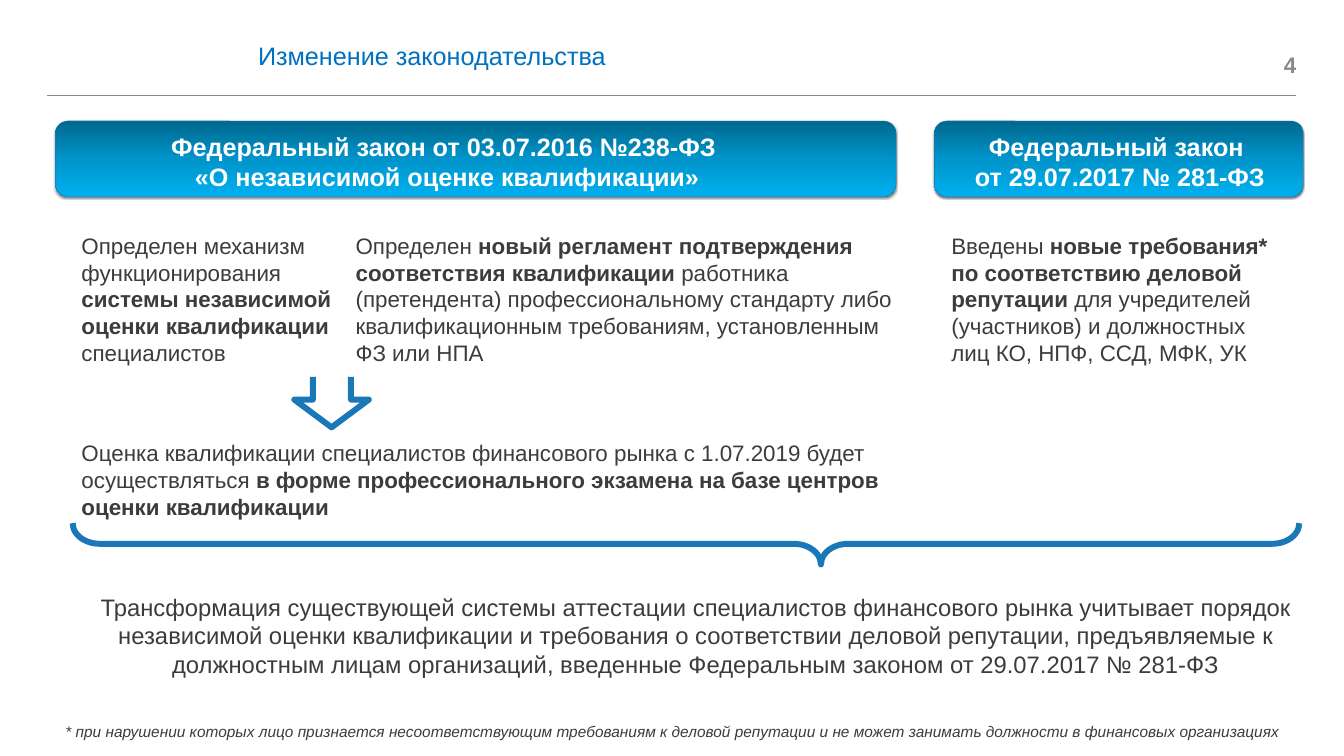
import copy
import dataclasses

import pptx
import pptx.dml.color
import pptx.enum.shapes
import pptx.enum.text
import pptx.oxml
import pptx.oxml.ns
import pptx.util

ALIGN = pptx.enum.text.PP_ALIGN
SHAPE = pptx.enum.shapes.MSO_SHAPE
CELL = pptx.util.Inches(1) / 12


@dataclasses.dataclass(frozen=True)
class Theme:
    """Colours, type sizes and line widths of the slide."""
    font: str = "Arial"
    white: str = "FFFFFF"
    ink: str = "3C3C3C"
    grey: str = "888A8D"
    title: str = "0070C0"
    accent: str = "1A78B9"
    gradient: tuple = ("00688E", "0094CA", "00B0F0")
    heading_size: int = 18
    summary_size: int = 17
    body_size: int = 16
    note_size: int = 11
    thick: float = 4.25
    thin: float = 0.5
    hairline: float = 0.25


@dataclasses.dataclass(frozen=True)
class Box:
    """A rectangle in cells of a grid of 160 columns by 90 rows."""
    left: float
    top: float
    width: float
    height: float

    def inner(self, left, top, width, height):
        """Return a box placed relative to this one."""
        return Box(self.left + left, self.top + top, width, height)

    def place(self):
        """Return left, top, width and height as slide lengths."""
        cells = (self.left, self.top, self.width, self.height)
        return [pptx.util.Emu(round(cell * CELL)) for cell in cells]


THEME = Theme()


def rgb(colour):
    """Return a colour object for a hex string."""
    return pptx.dml.color.RGBColor.from_string(colour)


def set_line(shape, colour, width):
    """Set the colour and width of an outline."""
    shape.line.color.rgb = rgb(colour)
    shape.line.width = pptx.util.Pt(width)


def add_text(page, box, text, size, colour=THEME.ink, bold=False, italic=False,
             align=ALIGN.LEFT, margins=None, fill=None):
    """Add a text box where bars in the text switch bold on and off."""
    shape = page.shapes.add_textbox(*box.place())
    frame = shape.text_frame
    frame.word_wrap = True
    if fill:
        shape.fill.solid()
        shape.fill.fore_color.rgb = rgb(fill)
    if margins is None:
        frame.auto_size = pptx.enum.text.MSO_AUTO_SIZE.SHAPE_TO_FIT_TEXT
    else:
        frame.margin_left = frame.margin_right = pptx.util.Inches(margins)
        frame.margin_top = frame.margin_bottom = pptx.util.Inches(margins)
    for number, line in enumerate(text.split("\n")):
        para = frame.add_paragraph() if number else frame.paragraphs[0]
        para.alignment = align
        for index, piece in enumerate(line.split("|")):
            span = para.add_run()
            span.text = piece
            span.font.name = THEME.font
            span.font.size = pptx.util.Pt(size)
            span.font.bold = bold or index % 2 == 1
            span.font.italic = italic
            span.font.color.rgb = rgb(colour)
    return frame


def add_header(page, box):
    """Add the title, the page number and the rule below them."""
    title = add_text(page, box.inner(24.84, 4.2, 112.8, 6.6), "Изменение законодательства",
                     THEME.heading_size, THEME.title, margins=0.02)
    title.paragraphs[0].line_spacing = 1.1
    number = add_text(page, box.inner(138.96, 5.64, 9.72, 4.2), "4", THEME.body_size,
                      THEME.grey, bold=True, align=ALIGN.RIGHT, margins=0)
    number.vertical_anchor = pptx.enum.text.MSO_ANCHOR.MIDDLE
    left, top, width, _ = box.inner(0, box.height, box.width, 0).place()
    rule = page.shapes.add_connector(pptx.enum.shapes.MSO_CONNECTOR.STRAIGHT,
                                     left, top, left + width, top)
    set_line(rule, THEME.grey, THEME.thin)
    properties = rule._element.spPr
    properties.append(properties.makeelement(pptx.oxml.ns.qn("a:effectLst"), {}))


def add_banner(page, box, caption_box, caption):
    """Add a rounded gradient banner with the name of a law."""
    banner = page.shapes.add_shape(SHAPE.ROUNDED_RECTANGLE, *box.place())
    set_line(banner, THEME.accent, THEME.hairline)
    banner.fill.gradient()
    banner.fill.gradient_angle = 270
    properties = banner._element.spPr
    stop_list = properties.find(".//" + pptx.oxml.ns.qn("a:gsLst"))
    stop_list.insert(1, copy.deepcopy(stop_list[0]))
    for index, stop in enumerate(banner.fill.gradient_stops):
        stop.color.rgb = rgb(THEME.gradient[index])
        stop.position = index / 2
    banner.shadow.inherit = False
    properties.find(pptx.oxml.ns.qn("a:effectLst")).append(pptx.oxml.parse_xml(
        '<a:outerShdw xmlns:a="http://schemas.openxmlformats.org/drawingml/2006/main" '
        'blurRad="12700" dist="12700" dir="5400000" rotWithShape="0">'
        '<a:srgbClr val="000000"><a:alpha val="50000"/></a:srgbClr></a:outerShdw>'))
    add_text(page, box.inner(*caption_box), caption, THEME.heading_size, THEME.white,
             bold=True, align=ALIGN.CENTER)


def add_assessment_law(page, box):
    """Add the law on assessment, its two provisions and their outcome."""
    add_banner(page, box.inner(0, 0, box.width, 9), (-0.48, 0.6, 94.2, 8.52),
               "Федеральный закон от 03.07.2016 №238-ФЗ \n«О независимой оценке квалификации»")
    add_text(page, box.inner(34.56, 12.6, 67.56, 17.4),
             "Определен |новый регламент подтверждения соответствия квалификации| работника "
             "(претендента) профессиональному стандарту либо квалификационным требованиям, "
             "установленным ФЗ или НПА", THEME.body_size, fill=THEME.white)
    add_text(page, box.inner(1.92, 12.6, 32.64, 17.4),
             "Определен механизм функционирования |системы независимой оценки квалификации"
             "| специалистов", THEME.body_size, fill=THEME.white)
    add_down_arrow(page, box.inner(28.44, 30.48, 8.88, 6))
    add_text(page, box.inner(1.92, 37.32, 98.04, 10.92),
             "Оценка квалификации специалистов финансового рынка с 1.07.2019 будет "
             "осуществляться |в форме профессионального экзамена на базе центров оценки "
             "квалификации", THEME.body_size)


def add_down_arrow(page, box):
    """Add an outlined arrow, open at the top, that fills the box."""
    left, top, width, height = box.place()
    outline = [(0.76, 0), (0.76, 0.45), (1, 0.45), (0.5, 1), (0, 0.45), (0.25, 0.45), (0.25, 0)]
    points = [(round(left + x * width), round(top + y * height)) for x, y in outline]
    builder = page.shapes.build_freeform(*points[0])
    builder.add_line_segments(points[1:], close=False)
    arrow = builder.convert_to_shape()
    arrow.shadow.inherit = False
    arrow.fill.background()
    set_line(arrow, THEME.accent, THEME.thick)


def add_reputation_law(page, box):
    """Add the law on business reputation and its provision."""
    add_banner(page, box.inner(0, 0, box.width, 9), (0.84, 0.6, 42.48, 8.52),
               "Федеральный закон \nот 29.07.2017 № 281-ФЗ")
    add_text(page, box.inner(0.84, 12.6, 42.48, 17.4),
             "Введены| новые требования* по соответствию деловой репутации |для учредителей "
             "(участников) и должностных лиц КО, НПФ, ССД, МФК, УК", THEME.body_size)


def add_summary(page, box):
    """Add the brace that joins both laws and the conclusion below it."""
    length, depth = box.width, 4.92
    upright = box.inner((length - depth) / 2, (depth - length) / 2, depth, length)
    brace = page.shapes.add_shape(SHAPE.RIGHT_BRACE, *upright.place())
    brace.rotation = 90
    brace.adjustments[0] = 0.66
    brace.adjustments[1] = 0.39
    brace.shadow.inherit = False
    brace.fill.background()
    set_line(brace, THEME.accent, THEME.thick)
    add_text(page, box.inner(1.92, 7.68, 144.6, 11.52),
             "Трансформация существующей системы аттестации специалистов финансового рынка "
             "учитывает порядок независимой оценки квалификации и требования о соответствии "
             "деловой репутации, предъявляемые к должностным лицам организаций, введенные "
             "Федеральным законом от 29.07.2017 № 281-ФЗ", THEME.summary_size,
             align=ALIGN.CENTER)


def add_footnote(page, box):
    """Add the note on the reputation requirements."""
    add_text(page, box, "* при нарушении которых лицо признается несоответствующим требованиям "
             "к деловой репутации и не может занимать должности в финансовых организациях",
             THEME.note_size, italic=True)


def main():
    """Build the slide and save it."""
    deck = pptx.Presentation()
    deck.slide_width, deck.slide_height = Box(0, 0, 160, 90).place()[2:]
    page = deck.slides.add_slide(deck.slide_layouts[6])
    add_header(page, Box(5.64, 0, 148.68, 11.4))
    add_assessment_law(page, Box(6.6, 14.4, 100.08, 48.24))
    add_reputation_law(page, Box(111.24, 14.4, 43.92, 30))
    add_summary(page, Box(8.64, 62.28, 146.04, 19.2))
    add_footnote(page, Box(6.6, 85.32, 150.24, 3.48))
    deck.save("out.pptx")


if __name__ == "__main__":
    main()
